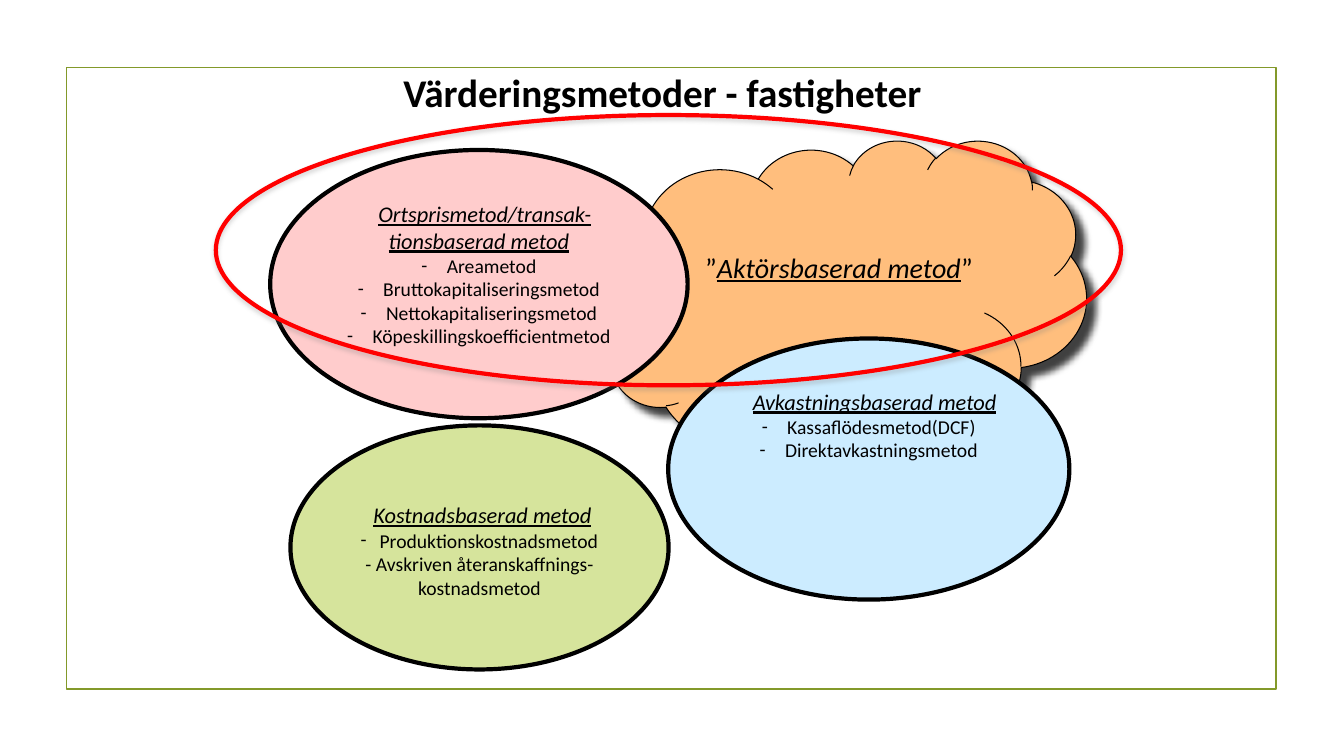
"""Build the slide on property valuation methods as overlapping ovals and a cloud."""
from dataclasses import dataclass

import pptx
import pptx.dml.color
import pptx.enum.shapes
import pptx.enum.text
import pptx.oxml.ns
import pptx.util
from lxml import etree

Cm = pptx.util.Cm
Pt = pptx.util.Pt
qn = pptx.oxml.ns.qn
Shapes = pptx.enum.shapes.MSO_SHAPE


@dataclass(frozen=True)
class Theme:
    font: str = "Calibri"
    ink: str = "000000"
    frame: str = "83992A"
    cost: str = "D6E49C"
    actor: str = "FFBE7D"
    income: str = "CCECFF"
    market: str = "FFCCCC"
    highlight: str = "FF0000"
    soft_shadow: str = "808080"
    title: int = 28
    actor_name: int = 20
    quote: int = 18
    heading: int = 16
    body: int = 14


theme = Theme()


def add_outline(kind, box, fill, line, width):
    shape = slide.shapes.add_shape(kind, *[Cm(length) for length in box])
    shape.shadow.inherit = False
    if fill:
        shape.fill.solid()
        shape.fill.fore_color.rgb = pptx.dml.color.RGBColor.from_string(fill)
    else:
        shape.fill.background()
    shape.line.color.rgb = pptx.dml.color.RGBColor.from_string(line)
    shape.line.width = Pt(width)
    return shape


def add_shadow(shape, color, alpha, blur, distance, angle):
    effects = shape.element.spPr.find(qn("a:effectLst"))
    outer = etree.SubElement(
        effects, qn("a:outerShdw"), blurRad=str(Pt(blur)), dist=str(Pt(distance)),
        dir=str(angle * 60000), algn="ctr", rotWithShape="0")
    shade = etree.SubElement(outer, qn("a:srgbClr"), val=color)
    etree.SubElement(shade, qn("a:alpha"), val=str(alpha * 1000))


presentation = pptx.Presentation()
presentation.slide_width = Cm(33.87)
presentation.slide_height = Cm(19.05)
slide = presentation.slides.add_slide(presentation.slide_layouts[5])

title = slide.shapes.title
title.left, title.top, title.width, title.height = Cm(9.83), Cm(1.6), Cm(13.72), Cm(1.45)
title.text_frame.text = "Värderingsmetoder - fastigheter"
title.text_frame.word_wrap = False
title.text_frame.vertical_anchor = pptx.enum.text.MSO_ANCHOR.MIDDLE
title_font = title.text_frame.paragraphs[0].runs[0].font
title_font.name = theme.font
title_font.size = Pt(theme.title)
title_font.bold = True
title_font.color.rgb = pptx.dml.color.RGBColor.from_string(theme.ink)

add_outline(Shapes.RECTANGLE, (1.68, 1.7, 30.48, 15.67), None, theme.frame, 1.25)

# kind, box, fill, line width, top margin, first-line indent, paragraphs (bullet gap, text)
methods = [
    (Shapes.OVAL, (7.32, 10.72, 9.53, 6.15), theme.cost, 3, 1.02, 0.15, [
        (0, "Kostnadsbaserad metod"),
        (0.48, "Produktionskostnadsmetod"),
        (0, "- Avskriven återanskaffnings-kostnadsmetod")]),
    (Shapes.CLOUD, (15.14, 3.53, 12.24, 8.2), theme.actor, 0.75, 1.54, 0, [
        (0.64, "”Aktörsbaserad metod”")]),
    (Shapes.OVAL, (16.84, 8.53, 10.11, 6.58), theme.income, 3, 0.28, 0.3, [
        (0, "Avkastningsbaserad metod"),
        (0.64, "Kassaflödesmetod(DCF)"),
        (0.64, "Direktavkastningsmetod")]),
    (Shapes.OVAL, (6.81, 3.78, 10.52, 6.76), theme.market, 3, 0.27, 0.3, [
        (0, "Ortsprismetod/transak-tionsbaserad metod"),
        (0.64, "Areametod"),
        (0.64, "Bruttokapitaliseringsmetod"),
        (0.64, "Nettokapitaliseringsmetod"),
        (0.64, "Köpeskillingskoefficientmetod")]),
]

for kind, box, fill, line_width, top_margin, heading_indent, lines in methods:
    method = add_outline(kind, box, fill, theme.ink, line_width)
    is_cloud = kind == Shapes.CLOUD
    if is_cloud:
        add_shadow(method, theme.ink, 75, 5, 8.5, 45)
    frame = method.text_frame
    frame.word_wrap = True
    frame.vertical_anchor = pptx.enum.text.MSO_ANCHOR.TOP
    frame.margin_top = Cm(top_margin)
    frame.margin_bottom = 0
    frame.text = "\n".join(text for gap, text in lines)
    for index, (paragraph, (gap, text)) in enumerate(zip(frame.paragraphs, lines)):
        paragraph.alignment = pptx.enum.text.PP_ALIGN.CENTER
        properties = paragraph._p.get_or_add_pPr()
        if gap:
            properties.set("marL", str(Cm(gap)))
            properties.set("indent", str(-Cm(gap)))
            etree.SubElement(properties, qn("a:buFont"), typeface=theme.font)
            etree.SubElement(properties, qn("a:buChar"), char="-")
        elif index == 0:
            properties.set("indent", str(Cm(heading_indent)))
        if is_cloud:
            paragraph.text = ""
            for part in (text[0], text[1:-1], text[-1]):
                paragraph.add_run().text = part
        for run in paragraph.runs:
            is_name = index == 0 and run.text != "”"
            run.font.name = theme.font
            run.font.color.rgb = pptx.dml.color.RGBColor.from_string(theme.ink)
            run.font.italic = run.font.underline = is_name
            run.font.size = Pt(theme.heading if is_name else theme.body)
            if is_cloud:
                run.font.size = Pt(theme.quote if run.text == text[0] and
                                   run is paragraph.runs[0] else theme.actor_name)

market_focus = add_outline(
    Shapes.OVAL, (5.44, 2.9, 22.81, 6.81), None, theme.highlight, 3)
add_shadow(market_focus, theme.soft_shadow, 35, 3.1, 1.8, 90)

presentation.save("out.pptx")
